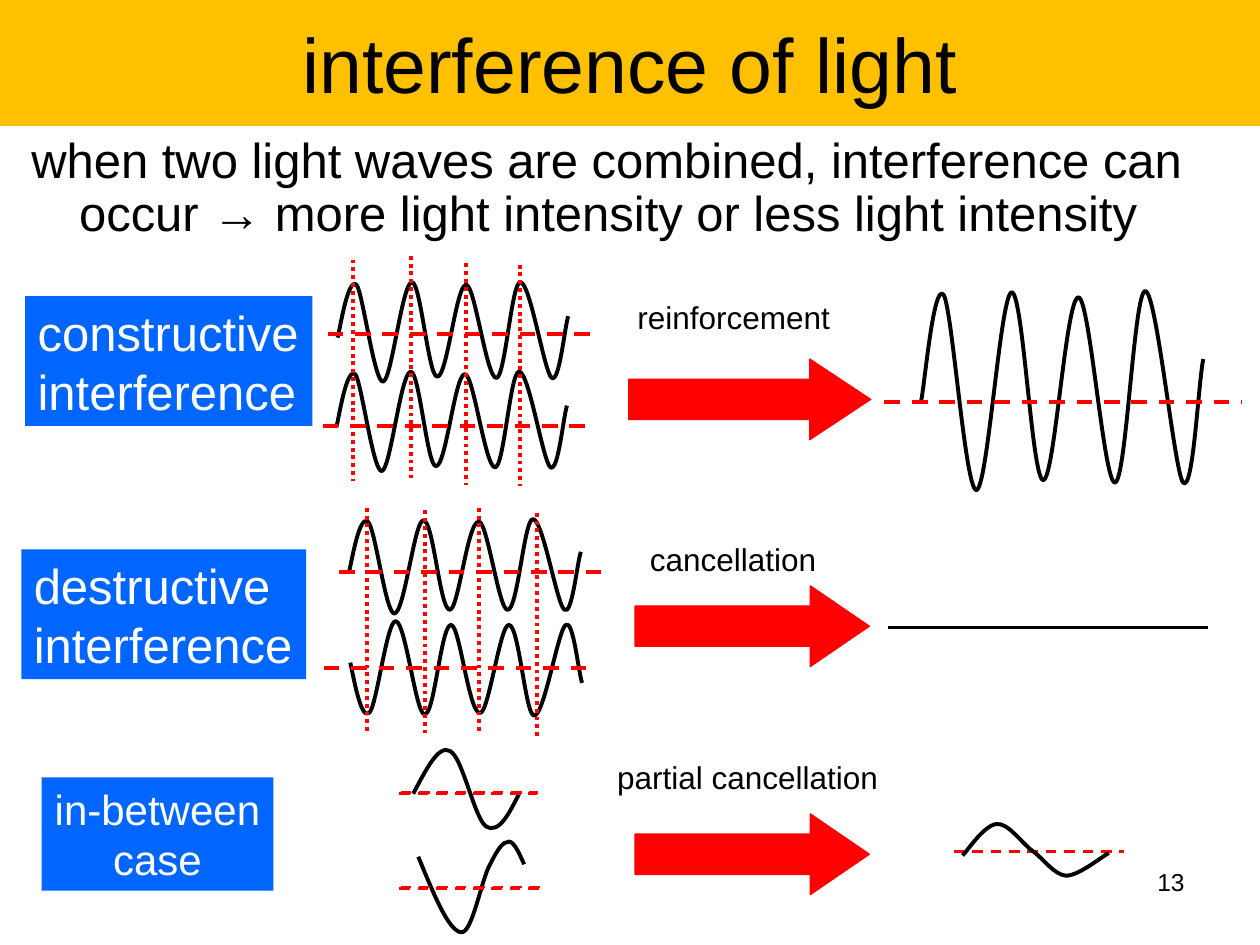
from collections import namedtuple

from lxml import etree
from pptx import Presentation
from pptx import util as u
from pptx.dml.color import RGBColor
from pptx.enum import dml, shapes, text
from pptx.oxml import ns

PX = 9144  # EMU in one px, 100 px to the inch
BLACK = RGBColor(0x00, 0x00, 0x00)
WHITE = RGBColor(0xFF, 0xFF, 0xFF)
RED = RGBColor(0xFF, 0x00, 0x00)
BLUE = RGBColor(0x00, 0x66, 0xFF)
AMBER = RGBColor(0xFF, 0xC0, 0x00)
DASH = dml.MSO_LINE.DASH
DOTS = dml.MSO_LINE.ROUND_DOT
LEFT, CENTER, RIGHT = text.PP_ALIGN.LEFT, text.PP_ALIGN.CENTER, text.PP_ALIGN.RIGHT

Box = namedtuple("Box", "left top width height")

# Bezier points of the wave train, relative to its start on the axis
TRAIN_WIDTH, TRAIN_HEIGHT = 224, 170
TRAIN = [
    (0, 0), (3, -14), (10, -96), (18, -85), (25, -73), (35, 70), (44, 70),
    (53, 69), (63, -86), (72, -87), (81, -88), (88, 62), (97, 62),
    (106, 63), (115, -84), (125, -83), (134, -83), (145, 65), (154, 64),
    (163, 63), (169, -88), (178, -88), (187, -88), (201, 55), (208, 64),
    (216, 73), (220, -14), (224, -34),
]
UPPER_CYCLE = [(0, 0), (10, -19), (20, -39), (29, -34), (39, -30), (49, 21),
               (58, 26), (68, 32), (76, 16), (84, 0)]
LOWER_CYCLE = [(0, 0), (12, 29), (24, 59), (34, 60), (43, 61), (50, 18), (57, 6),
               (63, -6), (67, -12), (72, -12), (76, -12), (80, -3), (84, 6)]
WEAK_CYCLE = [(0, 0), (4, -4), (17, -24), (27, -25), (36, -26), (46, -11), (55, -4),
              (64, 2), (72, 15), (82, 16), (92, 16), (109, 2), (116, -2)]


def add_text(page, box, words, size, color=BLACK, align=LEFT, fill=None, fit=False):
    """Add a text box; with fit it does not wrap and grows with its words."""
    item = page.shapes.add_textbox(*(n * PX for n in box))
    frame = item.text_frame
    frame.text = words
    frame.word_wrap = not fit
    if fit:
        frame.auto_size = text.MSO_AUTO_SIZE.SHAPE_TO_FIT_TEXT
    if fill is not None:
        item.fill.solid()
        item.fill.fore_color.rgb = fill
    for para in frame.paragraphs:
        para.alignment = align
        for span in para.runs:
            span.font.size = u.Pt(size)
            span.font.name = "Arial"
            span.font.color.rgb = color
    return frame


def add_line(canvas, left, top, width, height=0, color=RED, weight=2.25, dash=None):
    line = canvas.add_connector(shapes.MSO_CONNECTOR.STRAIGHT, left * PX, top * PX,
                                (left + width) * PX, (top + height) * PX)
    line.line.color.rgb = color
    line.line.width = u.Pt(weight)
    if dash is not None:
        line.line.dash_style = dash
    etree.SubElement(line._element.spPr, ns.qn("a:effectLst"))


def add_curve(canvas, left, top, points):
    """Draw a cubic Bezier chain; points are relative to its start."""
    placed = [(left + x, top + y) for x, y in points]
    builder = canvas.build_freeform(*placed[0], scale=PX)
    builder.add_line_segments(placed[1:], close=False)
    curve = builder.convert_to_shape()
    curve.fill.background()
    curve.line.color.rgb = BLACK
    curve.line.width = u.Pt(2.25)
    curve.shadow.inherit = False
    # Every three straight segments become one cubic segment
    outline = curve._element.find(".//" + ns.qn("a:path"))
    steps = outline.findall(ns.qn("a:lnTo"))
    for first in range(0, len(steps), 3):
        cubic = etree.SubElement(outline, ns.qn("a:cubicBezTo"))
        for step in steps[first:first + 3]:
            cubic.append(step[0])
            outline.remove(step)


def add_train(canvas, left, top, width, height):
    """Draw the wave train from its start; a negative height inverts it."""
    add_curve(canvas, left, top, [(round(x * width / TRAIN_WIDTH),
                                   round(y * height / TRAIN_HEIGHT)) for x, y in TRAIN])


def draw_title(page, box):
    frame = add_text(page, box, "interference of light", 44, align=CENTER, fill=AMBER)
    frame.vertical_anchor = text.MSO_ANCHOR.MIDDLE


def draw_statement(page, box):
    frame = add_text(page, box, "when two light waves are combined, interference can "
                     "occur → more light intensity or less light intensity", 28)
    para = frame.paragraphs[0]
    para.line_spacing = 0.9
    para.space_before = u.Pt(5.6)
    indent = 38 * PX
    props = para._p.get_or_add_pPr()
    props.set("marL", str(indent))
    props.set("indent", str(-indent))


def draw_label(page, box, words, size=28, align=LEFT):
    add_text(page, box, words, size, WHITE, align, BLUE, fit=True)


def draw_wave_pair(page, box, trains, axes, guides):
    """Two wave trains with dashed axes, and dotted guides through the crests."""
    group = page.shapes.add_group_shape().shapes
    for x, y, width, height in trains:
        add_train(group, box.left + x, box.top + y, width, height)
    for x, y in axes:
        add_line(group, box.left + x, box.top + y, 212, dash=DASH)
    for x, y in guides:
        add_line(page.shapes, box.left + x, box.top + y, 0, box.height, dash=DOTS)


def draw_shifted_cycles(page, box):
    group = page.shapes.add_group_shape().shapes
    add_curve(group, box.left + 11, box.top + 39, UPPER_CYCLE)
    add_curve(group, box.left + 15, box.top + 89, LOWER_CYCLE)
    for shift in (0, 1):
        for y, width in ((39, 109), (114, 112)):
            add_line(group, box.left + shift, box.top + y - shift, width,
                     weight=1.5, dash=DASH)


def draw_step(page, box, head, caption, caption_box):
    """A red block arrow with a caption placed relative to it."""
    arrow = page.shapes.add_shape(shapes.MSO_SHAPE.RIGHT_ARROW, *(n * PX for n in box))
    arrow.adjustments[0] = 0.5
    arrow.adjustments[1] = head
    arrow.fill.solid()
    arrow.fill.fore_color.rgb = RED
    arrow.line.color.rgb = RED
    arrow.line.width = u.Pt(0.75)
    arrow.shadow.inherit = False
    x, y, width, height = caption_box
    add_text(page, Box(box.left + x, box.top + y, width, height), caption, 18, fit=True)


def draw_strong_result(page, box):
    add_train(page.shapes, box.left + 29, box.top + 96, TRAIN_WIDTH, TRAIN_HEIGHT)
    add_line(page.shapes, box.left, box.top + 96, box.width, dash=DASH)


def draw_weak_result(page, box):
    add_line(page.shapes, box.left, box.top + 23, box.width, weight=1.5, dash=DASH)
    add_curve(page.shapes, box.left + 7, box.top + 26, WEAK_CYCLE)


def main():
    deck = Presentation()
    deck.slide_width, deck.slide_height = 1000 * PX, 750 * PX
    page = deck.slides.add_slide(deck.slide_layouts[6])

    draw_title(page, Box(0, 0, 1000, 100))
    draw_statement(page, Box(15, 103, 967, 97))

    draw_label(page, Box(20, 235, 228, 103), "constructive\ninterference")
    draw_wave_pair(page, Box(256, 203, 215, 176),
                   trains=[(12, 65, 183, 85), (11, 136, 183, 85)],
                   axes=[(4, 62), (0, 135)],
                   guides=[(24, 3), (70, 0), (114, 6), (157, 7)])
    draw_step(page, Box(499, 285, 192, 64), 0.755, "reinforcement", (-3, -53, 173, 40))
    draw_strong_result(page, Box(702, 223, 284, 170))

    draw_label(page, Box(17, 436, 226, 103), "destructive\ninterference")
    draw_wave_pair(page, Box(257, 403, 224, 177),
                   trains=[(20, 51, 184, 81), (21, 123, 184, -81)],
                   axes=[(12, 51), (0, 127)],
                   guides=[(34, 0), (80, 2), (123, 0), (169, 4)])
    draw_step(page, Box(504, 465, 186, 64), 0.731, "cancellation", (2, -41, 152, 40))
    add_line(page.shapes, 705, 498, 254, color=BLACK)

    draw_label(page, Box(33, 617, 184, 90), "in-between\ncase", 24, CENTER)
    draw_shifted_cycles(page, Box(317, 591, 113, 150))
    draw_step(page, Box(504, 646, 186, 64), 0.731, "partial cancellation",
              (-24, -49, 227, 40))
    draw_weak_result(page, Box(757, 653, 135, 42))

    add_text(page, Box(717, 683, 233, 52), "13", 14, align=RIGHT)
    deck.save("out.pptx")


if __name__ == "__main__":
    main()
